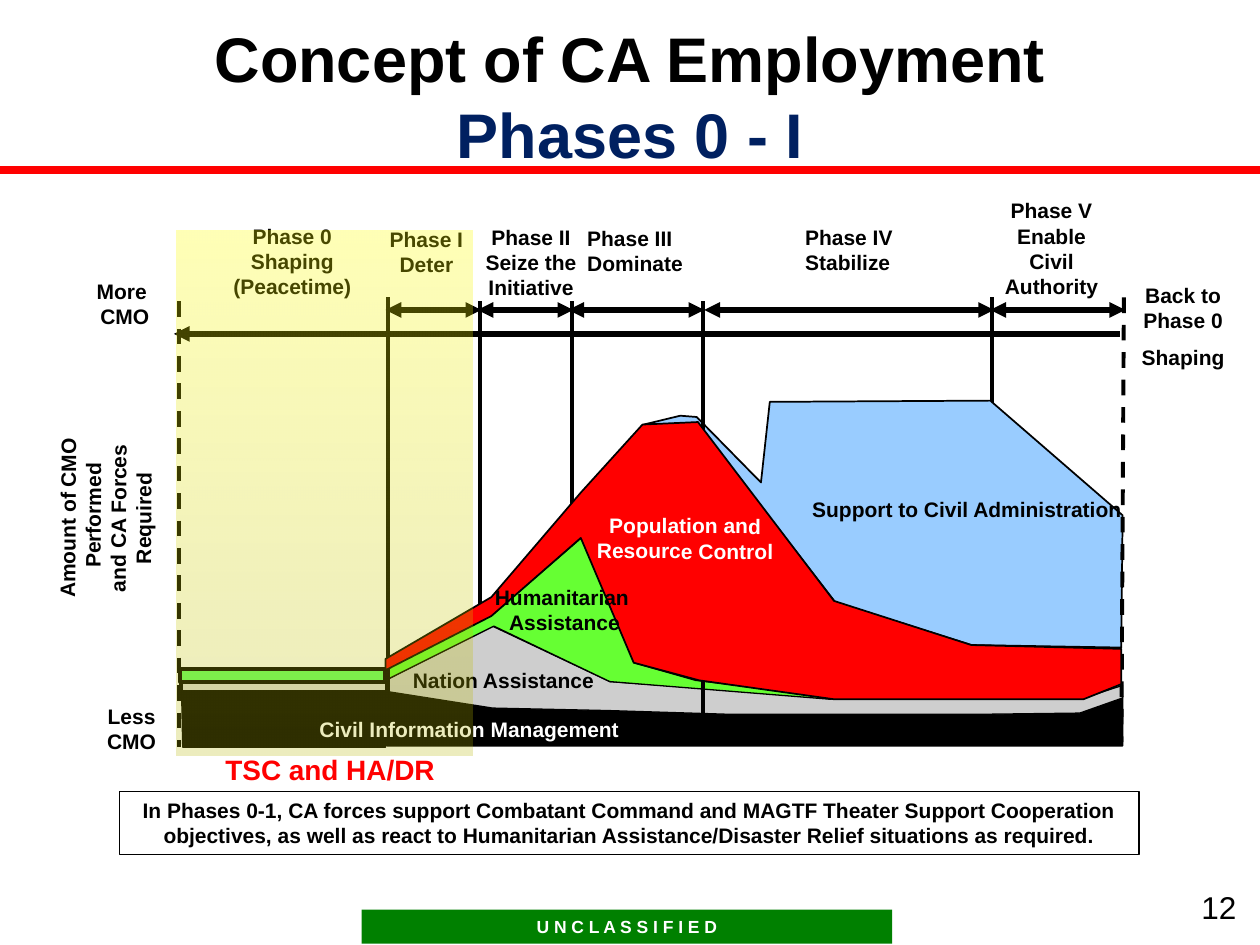
from lxml.etree import SubElement
from pptx import Presentation
from pptx.dml.color import RGBColor
from pptx.enum.dml import MSO_LINE
from pptx.enum.shapes import MSO_CONNECTOR, MSO_SHAPE
from pptx.enum.text import MSO_ANCHOR, PP_ALIGN
from pptx.oxml.ns import qn
from pptx.util import Inches, Pt

THEME = {
    "font": "Arial",
    "title": 36, "number": 18, "callout": 16, "label": 12, "marking": 10,
    "black": "000000", "white": "FFFFFF", "red": "FF0000", "navy": "002060",
    "green": "66FF33", "mint": "66FF66", "blue": "99CCFF", "grey": "CECECE",
    "silver": "DDDDDD", "marking_green": "008000",
    "yellow": "FFFF00", "olive": "B6B600",
}
TITLE = [("Concept of CA Employment", "black"), ("Phases 0 - I", "navy")]
CENTER, LEFT, RIGHT = PP_ALIGN.CENTER, PP_ALIGN.LEFT, PP_ALIGN.RIGHT
BASELINE = 5.91
ARROW_Y = 2.46

BACK_DIVIDERS = [(7.87, 2.36), (3.81, 2.39), (4.54, 2.39)]
FRONT_DIVIDERS = [(5.58, 2.39), (3.08, 2.36)]
DASHED_EDGES = [((1.42, 2.39), (1.42, 5.93)), ((8.92, 2.36), (8.9, 5.89))]
PHASE_SPANS = [(3.06, 3.82), (3.79, 4.55), (4.51, 5.59), (5.59, 7.89), (7.86, 8.93)]

INFORMATION = ("black", 0.75, [
    (3.07, 5.92), (3.08, 5.47), (3.93, 5.62), (4.84, 5.64), (6.87, 5.67),
    (7.59, 5.66), (8.57, 5.66), (8.91, 5.53), (8.91, 5.92)])
NATION = ("grey", 0.75, [
    (3.08, 5.49), (3.08, 5.39), (3.91, 4.97), (4.84, 5.41), (6.85, 5.55),
    (7.72, 5.55), (8.57, 5.55), (8.91, 5.44), (8.91, 5.54), (8.57, 5.66),
    (7.72, 5.67), (6.86, 5.67), (5.81, 5.67), (4.83, 5.64), (3.91, 5.62)])
HUMANITARIAN = ("green", 0.75, [
    (3.08, 5.3), (3.92, 4.87), (4.82, 4.09), (5.03, 5.26), (5.52, 5.4),
    (6.63, 5.53), (6.59, 5.55), (4.84, 5.41), (3.92, 4.97), (3.08, 5.39)])
CIVIL_SUPPORT = ("blue", 1, [
    (5.53, 3.31), (6.04, 3.83), (6.11, 3.19), (7.86, 3.18), (8.91, 4.09),
    (8.9, 5.14), (7.71, 5.12), (6.63, 4.78), (5.53, 3.36), (5.11, 3.37),
    (5.4, 3.3)])
SHAPING = ("black", 0.75, [(3.06, 5.93), (3.06, 5.43), (1.44, 5.43), (1.45, 5.93)])
POPULATION = ("red", 1, [
    (3.06, 5.23), (3.9, 4.74), (4.61, 3.91), (5.1, 3.37), (5.54, 3.35),
    (6.62, 4.77), (7.71, 5.12), (8.9, 5.15), (8.9, 5.43), (8.6, 5.55),
    (6.62, 5.55), (5.55, 5.4), (5.03, 5.26), (4.61, 4.27), (3.9, 4.89),
    (3.06, 5.32)])
STRIPES = [((1.44, 5.39, 1.63, 0.1), "silver"), ((1.43, 5.31, 1.63, 0.1), "mint")]

LABELS = [
    ((1.71, 1.73, 1.22, 0.68), ["Phase 0", "Shaping", "(Peacetime)"], {}),
    ((3.02, 1.76, 0.73, 0.48), ["Phase I", "Deter"], {}),
    ((3.78, 1.74, 0.87, 0.68), ["Phase II", "Seize the", "Initiative"], {}),
    ((4.59, 1.75, 0.95, 0.65), ["Phase III", "Dominate"], {"align": LEFT}),
    ((6.32, 1.74, 0.88, 0.65), ["Phase IV", "Stabilize"], {"align": LEFT}),
    ((7.9, 1.53, 0.89, 0.88), ["Phase V", "Enable", "Civil", "Authority"], {}),
    ((0.38, 2.17, 1.22, 0.48), ["More ", "CMO"], {}),
    ((0.43, 5.54, 1.23, 0.48), ["Less", "CMO"], {}),
    ((0.1, 3.65, 1.47, 0.88),
     ["Amount of CMO ", "Performed", "and CA Forces ", "Required "], {"rotation": 270.4}),
    ((3.2, 5.26, 1.59, 0.27), ["Nation Assistance"], {}),
    ((6.36, 3.9, 2.63, 0.27), ["Support to Civil Administration"], {}),
    ((2.45, 5.65, 2.55, 0.27), ["Civil Information Management"],
     {"color": "white", "fill": "black"}),
    ((8.78, 2.2, 1.22, 0.78), ["Back to Phase 0", "Shaping"], {"wrap": True, "gap": 7}),
    ((3.85, 4.6, 1.22, 0.48), ["Humanitarian", " Assistance"], {}),
    ((4.66, 4.03, 1.6, 0.48), ["Population and ", "Resource Control "],
     {"color": "white", "rotation": 0.2}),
]
WIDE = (0.1, 0.05)
NOTES = [
    ((0.95, 6.28, 8.09, 0.5),
     ["In Phases 0-1, CA forces support Combatant Command and MAGTF Theater Support "
      "Cooperation objectives, as well as react to Humanitarian Assistance/Disaster "
      "Relief situations as required."],
     {"wrap": True, "insets": WIDE, "outline": "black"}),
    ((1.69, 5.92, 1.88, 0.37), ["TSC and HA/DR"],
     {"size": "callout", "color": "red", "align": LEFT, "insets": WIDE}),
    ((7.83, 7, 2.08, 0.5), ["12"],
     {"size": "number", "bold": False, "align": RIGHT, "wrap": True, "insets": WIDE}),
]
MARKING = ((2.87, 7.22, 4.21, 0.27), ["U N C L A S S I F I E D"],
           {"size": "marking", "color": "white", "fill": "marking_green", "insets": WIDE})


def color_of(name):
    return RGBColor.from_string(THEME[name])


def set_font(font, size, color, bold=True):
    font.name = THEME["font"]
    font.size = Pt(THEME[size])
    font.bold = bold
    font.color.rgb = color_of(color)


def add_line(page, start, end, width=2.25, color="black", dashed=False, arrows=()):
    line = page.shapes.add_connector(MSO_CONNECTOR.STRAIGHT, *map(Inches, start + end))
    line.line.width = Pt(width)
    line.line.color.rgb = color_of(color)
    if dashed:
        line.line.dash_style = MSO_LINE.DASH
    for arrow in arrows:
        SubElement(line.line._get_or_add_ln(), qn("a:" + arrow), type="triangle")
    SubElement(line._element.spPr, qn("a:effectLst"))


def add_area(page, area):
    fill, width, points = area
    corners = [(Inches(x), Inches(y)) for x, y in points]
    builder = page.shapes.build_freeform(*corners[0], scale=1.0)
    builder.add_line_segments(corners[1:], close=True)
    paint(builder.convert_to_shape(), fill, "black", width)


def paint(shape, fill, outline=None, width=0.75):
    shape.shadow.inherit = False
    shape.fill.solid()
    shape.fill.fore_color.rgb = color_of(fill)
    if outline:
        shape.line.color.rgb = color_of(outline)
        shape.line.width = Pt(width)
    else:
        shape.line.fill.background()


def add_rectangle(page, place):
    return page.shapes.add_shape(MSO_SHAPE.RECTANGLE, *map(Inches, place))


def add_label(page, place, lines, size="label", color="black", bold=True, align=CENTER,
              wrap=False, gap=0, rotation=0, insets=(0.07, 0.04), fill=None, outline=None):
    if fill or outline:
        box = add_rectangle(page, place)
        paint(box, fill or "white", outline)
    else:
        box = page.shapes.add_textbox(*map(Inches, place))
    box.rotation = rotation
    frame = box.text_frame
    frame.word_wrap = wrap
    frame.vertical_anchor = MSO_ANCHOR.TOP
    frame.margin_left = frame.margin_right = Inches(insets[0])
    frame.margin_top = frame.margin_bottom = Inches(insets[1])
    frame.text = "\n".join(lines)
    for index, paragraph in enumerate(frame.paragraphs):
        paragraph.alignment = align
        if index and gap:
            paragraph.space_before = Pt(gap)
        set_font(paragraph.font, size, color, bold)


def add_title(page):
    title = page.shapes.title
    title.left, title.top, title.width, title.height = map(Inches, (0.25, 0.13, 9.5, 1.25))
    title.text_frame.vertical_anchor = MSO_ANCHOR.MIDDLE
    paragraph = title.text_frame.paragraphs[0]
    paragraph.alignment = CENTER
    for index, (text, color) in enumerate(TITLE):
        if index:
            paragraph.add_line_break()
        span = paragraph.add_run()
        span.text = text
        set_font(span.font, "title", color)


def add_highlight(page):
    shape = add_rectangle(page, (1.4, 1.83, 2.35, 4.17))
    shape.shadow.inherit = False
    shape.line.fill.background()
    shape.fill.gradient()
    shape.fill.gradient_angle = 270
    for stop, color, alpha in zip(shape.fill.gradient_stops, ("yellow", "olive"), (29, 26)):
        stop.color.rgb = color_of(color)
        value = stop._gs.find(qn("a:srgbClr"))
        SubElement(value, qn("a:alpha"), val=str(alpha * 1000))


def main():
    deck = Presentation()
    deck.slide_width, deck.slide_height = Inches(10), Inches(7.5)
    page = deck.slides.add_slide(deck.slide_layouts[5])
    add_line(page, (0, 1.35), (10, 1.35), 4.5, "red")
    add_title(page)
    for x, top in BACK_DIVIDERS:
        add_line(page, (x, BASELINE), (x, top))
    for area in (INFORMATION, NATION, HUMANITARIAN, CIVIL_SUPPORT):
        add_area(page, area)
    for x, top in FRONT_DIVIDERS:
        add_line(page, (x, BASELINE), (x, top))
    add_area(page, SHAPING)
    add_line(page, (1.38, 2.65), (8.89, 2.65), 3, arrows=["headEnd"])
    for left, right in PHASE_SPANS:
        add_line(page, (left, ARROW_Y), (right, ARROW_Y), 3, arrows=["headEnd", "tailEnd"])
    for start, end in DASHED_EDGES:
        add_line(page, start, end, dashed=True)
    for place, fill in STRIPES:
        paint(add_rectangle(page, place), fill, "black", 2.25)
    add_area(page, POPULATION)
    for place, lines, style in LABELS:
        add_label(page, place, lines, **style)
    add_highlight(page)
    for place, lines, style in NOTES + [MARKING]:
        add_label(page, place, lines, **style)
    deck.save("out.pptx")


if __name__ == "__main__":
    main()
